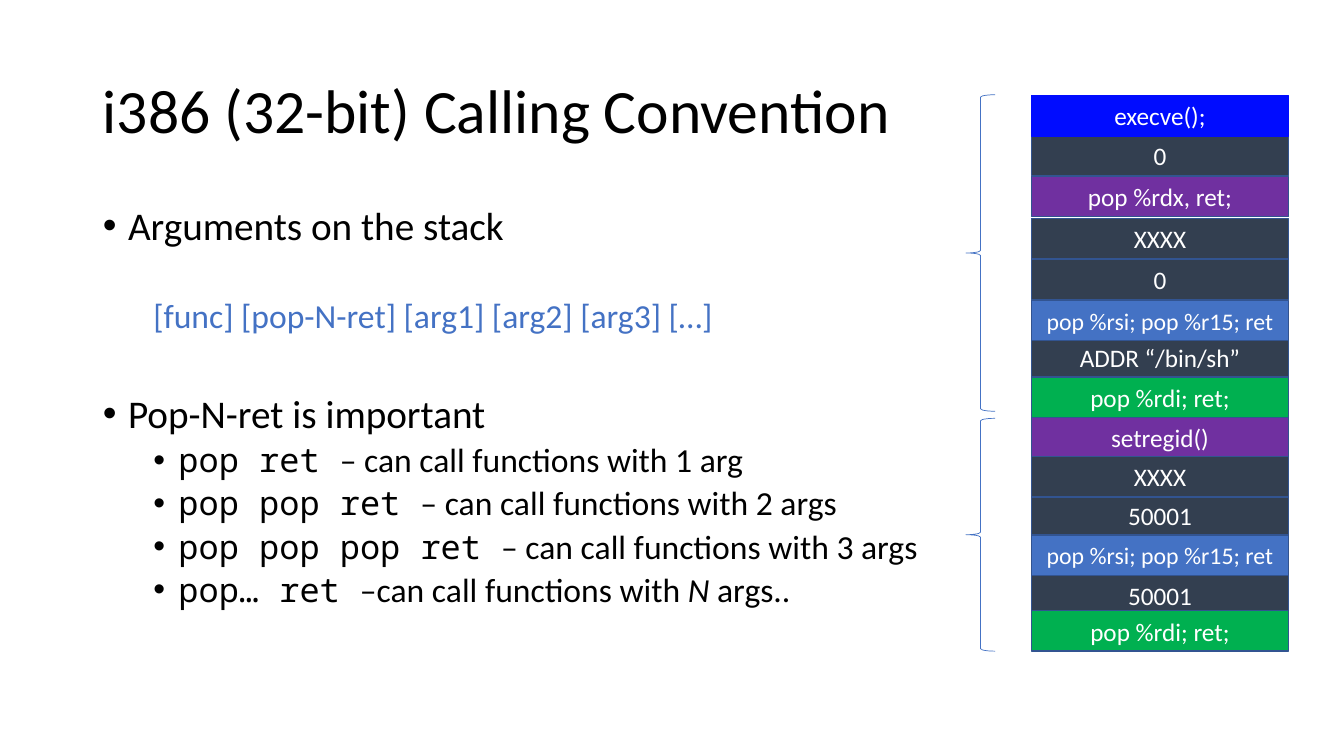
from dataclasses import dataclass

import lxml.etree
import pptx
import pptx.dml.color
import pptx.enum.shapes
import pptx.enum.text
import pptx.oxml.ns
import pptx.util
from pptx.util import Inches

COLORS = {
    "black": "000000",
    "white": "FFFFFF",
    "value": "333F50",
    "border": "325491",
    "blue": "4472C4",
    "green": "00B050",
    "purple": "7030A0",
    "call": "000CFF",
}
SANS = "Calibri"
MONO = "Noto Sans Mono"
CELL_LEFT, CELL_WIDTH, CELL_HEIGHT = 10.23, 2.55, 0.4
BRACE_LEFT, BRACE_WIDTH = 9.58, 0.29


@dataclass
class StackCell:
    text: str
    top: float
    fill: str = "value"
    border: str = "border"
    size: int = 18


@dataclass
class Brace:
    top: float
    height: float


@dataclass
class Line:
    text: str
    size: int
    margin: float
    space_before: float
    code: str = ""
    emphasis: str = ""
    ending: str = ""
    level: int = 0
    bullet: bool = True
    color: str = "black"


def pop_line(code: str, text: str, emphasis: str = "", ending: str = "") -> Line:
    return Line(text, 24, 0.75, 5, code, emphasis, ending, level=1)


LINES = [
    Line("Arguments on the stack", 28, 0.25, 0),
    Line("[func] [pop-N-ret] [arg1] [arg2] [arg3] […]", 24, 0.5, 36.4,
         level=1, bullet=False, color="blue"),
    Line("Pop-N-ret is important", 28, 0.25, 41.4),
    pop_line("pop ret ", "– can call functions with 1 arg"),
    pop_line("pop pop ret ", "– can call functions with 2 args"),
    pop_line("pop pop pop ret ", "– can call functions with 3 args"),
    pop_line("pop… ret ", "–can call functions with ", "N ", "args.."),
]

STACK = [
    StackCell("50001", 5.71),
    StackCell("pop %rdi; ret;", 6.06, "green"),
    StackCell("setregid()", 4.14, "purple"),
    StackCell("pop %rsi; pop %r15; ret", 5.31, "blue", size=17),
    StackCell("50001", 4.91),
    StackCell("XXXX", 4.53),
    StackCell("ADDR “/bin/sh”", 3.35),
    StackCell("pop %rdi; ret;", 3.74, "green"),
    StackCell("pop %rdx, ret;", 1.75, "purple"),
    StackCell("pop %rsi; pop %r15; ret", 2.98, "blue", size=17),
    StackCell("0", 2.57),
    StackCell("XXXX", 2.17),
    StackCell("0", 1.34),
    StackCell("execve();", 0.95, "call", "call"),
]

BRACES = [Brace(4.15, 2.31), Brace(0.94, 3.14)]


def rgb(name: str) -> pptx.dml.color.RGBColor:
    return pptx.dml.color.RGBColor.from_string(COLORS[name])


def set_font(font, size: int, color: str, name: str = SANS) -> None:
    font.name = name
    font.size = pptx.util.Pt(size)
    font.color.rgb = rgb(color)


def place(shape, left: float, top: float, width: float, height: float) -> None:
    shape.left, shape.top = Inches(left), Inches(top)
    shape.width, shape.height = Inches(width), Inches(height)


def set_bullet(paragraph, line: Line) -> None:
    properties = paragraph._p.get_or_add_pPr()
    properties.set("marL", str(Inches(line.margin)))
    properties.set("indent", str(Inches(-0.25 if line.bullet else 0)))
    qualified = pptx.oxml.ns.qn
    if line.bullet:
        lxml.etree.SubElement(properties, qualified("a:buFont")).set("typeface", "Arial")
        lxml.etree.SubElement(properties, qualified("a:buChar")).set("char", "•")
    else:
        lxml.etree.SubElement(properties, qualified("a:buNone"))


def write_line(paragraph, line: Line) -> None:
    paragraph.level = line.level
    set_bullet(paragraph, line)
    paragraph.line_spacing = 0.9
    paragraph.space_before = pptx.util.Pt(line.space_before)
    set_font(paragraph.font, line.size, line.color)
    for text in (line.code, line.text, line.emphasis, line.ending):
        if text:
            run = paragraph.add_run()
            run.text = text
            if text == line.code:
                run.font.name = MONO
            if text == line.emphasis:
                run.font.italic = True


def write_title(slide) -> None:
    title = slide.shapes.title
    place(title, 0.92, 0.4, 11.5, 1.45)
    frame = title.text_frame
    frame.text = "i386 (32-bit) Calling Convention"
    frame.vertical_anchor = pptx.enum.text.MSO_ANCHOR.MIDDLE
    paragraph = frame.paragraphs[0]
    paragraph.alignment = pptx.enum.text.PP_ALIGN.LEFT
    paragraph.line_spacing = 0.9
    set_font(paragraph.font, 44, "black")


def write_body(slide) -> None:
    body = slide.placeholders[1]
    place(body, 0.92, 2, 8.3, 4.76)
    frame = body.text_frame
    frame.auto_size = pptx.enum.text.MSO_AUTO_SIZE.NONE
    for index, line in enumerate(LINES):
        write_line(frame.add_paragraph() if index else frame.paragraphs[0], line)


def draw_cell(slide, cell: StackCell) -> None:
    shape = slide.shapes.add_shape(
        pptx.enum.shapes.MSO_SHAPE.RECTANGLE, Inches(CELL_LEFT), Inches(cell.top),
        Inches(CELL_WIDTH), Inches(CELL_HEIGHT))
    shape.shadow.inherit = False
    shape.fill.solid()
    shape.fill.fore_color.rgb = rgb(cell.fill)
    shape.line.color.rgb = rgb(cell.border)
    shape.line.width = pptx.util.Pt(1)
    shape.text_frame.text = cell.text
    paragraph = shape.text_frame.paragraphs[0]
    paragraph.alignment = pptx.enum.text.PP_ALIGN.CENTER
    set_font(paragraph.font, cell.size, "white")


def draw_brace(slide, brace: Brace) -> None:
    shape = slide.shapes.add_shape(
        pptx.enum.shapes.MSO_SHAPE.LEFT_BRACE, Inches(BRACE_LEFT), Inches(brace.top),
        Inches(BRACE_WIDTH), Inches(brace.height))
    shape.shadow.inherit = False
    shape.fill.background()
    shape.line.color.rgb = rgb("blue")
    shape.line.width = pptx.util.Pt(0.5)


def main() -> None:
    presentation = pptx.Presentation()
    presentation.slide_width = Inches(13.33)
    presentation.slide_height = Inches(7.5)
    slide = presentation.slides.add_slide(presentation.slide_layouts[1])
    write_title(slide)
    write_body(slide)
    for cell in STACK:
        draw_cell(slide, cell)
    for brace in BRACES:
        draw_brace(slide, brace)
    presentation.save("out.pptx")


if __name__ == "__main__":
    main()
